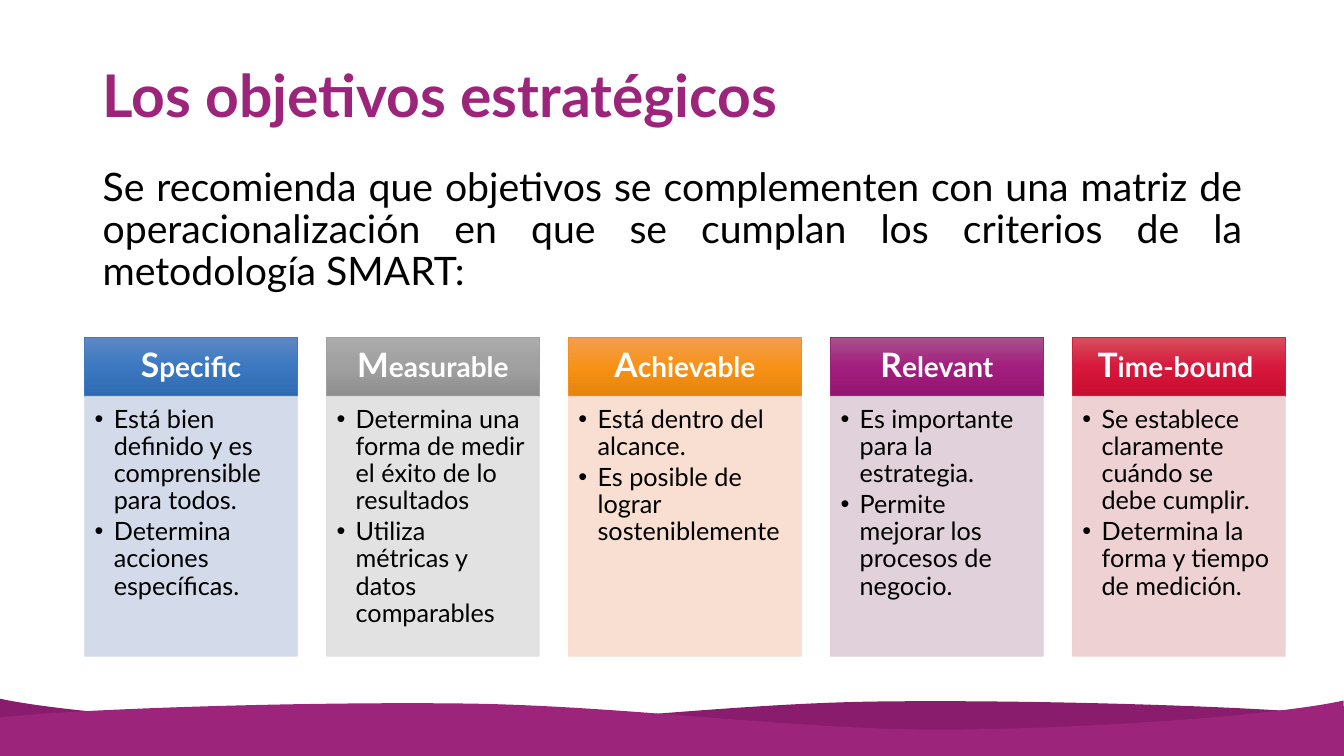
from copy import deepcopy
from pptx import Presentation, util as u
from pptx.dml.color import RGBColor
from pptx.enum import shapes, text
from pptx.oxml import ns
from lxml import etree

FONT = "Lato"
PLUM = "9C247B"
TITLE = "Los objetivos estratégicos"
INTRO = ("Se recomienda que objetivos se complementen con una matriz de "
         "operacionalización en que se cumplan los criterios de la metodología SMART:")
CARDS = [
    ("Specific", 2.11, ("5E88C4", "3B78C1", "2F6BB1"), "4179BB", "CFD7E7",
     ("Está bien definido y es comprensible para todos.",
      "Determina acciones específicas.")),
    ("Measurable", 2.11, ("ACABAB", "A1A0A0", "8F8E8E"), "A1A0A0", "E0DFDF",
     ("Determina una forma de medir el éxito de lo resultados",
      "Utiliza métricas y datos comparables")),
    ("Achievable", 2.31, ("F29D50", "F89216", "E5830B"), "EE9120", "F8DCCD",
     ("Está dentro del alcance.",
      "Es posible de lograr sosteniblemente")),
    ("Relevant", 2.11, ("A9508B", "A21E7E", "951572"), PLUM, "DECDD7",
     ("Es importante para la estrategia.",
      "Permite mejorar los procesos de negocio.")),
    ("Time-bound ", 2.11, ("D84F5E", "D7173C", "C70D30"), "CE2041", "EDCDCF",
     ("Se establece claramente cuándo se debe cumplir.",
      "Determina la forma y tiempo de medición.")),
]
WAVES = [
    ("891C6C", (13.33, 7.1),
     [(12.56, 7.01), (10.26, 6.94), (8.7, 6.96),
      (7.15, 6.98), (5.43, 7.22), (3.98, 7.22),
      (2.53, 7.21), (0.68, 7.08), (-0.01, 6.93)],
     [(-0.01, 7.49), (13.33, 7.5)]),
    (PLUM, (-0.01, 7.12),
     [(0.76, 7.03), (3.06, 6.96), (4.62, 6.98),
      (6.18, 7), (7.89, 7.24), (9.35, 7.24),
      (10.8, 7.23), (12.65, 7.1), (13.33, 6.95)],
     [(13.34, 7.5), (0, 7.52)]),
]
LEFT, TOP, GAP = 0.84, 3.35, 0.29
HEAD, BODY = 0.58, 2.58


def paint(color, code):
    color.rgb = RGBColor.from_string(code)


def style(run, size, code, bold=False):
    font = run.font
    font.name, font.size, font.bold = FONT, u.Pt(size), bold
    paint(font.color, code)


def setup(frame, anchor, insets):
    frame.word_wrap = True
    frame.vertical_anchor = anchor
    (frame.margin_left, frame.margin_top,
     frame.margin_right, frame.margin_bottom) = map(u.Inches, insets)


def label(slide, box, words, size, code, anchor, align, bold=False):
    frame = slide.shapes.add_textbox(*map(u.Inches, box)).text_frame
    setup(frame, anchor, (0.1, 0.05, 0.1, 0.05))
    frame.text = words
    para = frame.paragraphs[0]
    para.alignment, para.line_spacing = align, 0.9
    style(para.runs[0], size, code, bold)


def panel(slide, x, y, wide, high, edge):
    rect = slide.shapes.add_shape(
        shapes.MSO_SHAPE.RECTANGLE, *map(u.Inches, (x, y, wide, high)))
    rect.shadow.inherit = False
    rect.line.width = u.Pt(0.5)
    paint(rect.line.color, edge)
    return rect


def shade(rect, codes):
    rect.fill.gradient()
    rect.fill.gradient_angle = 270
    stops = rect._element.spPr.find(".//" + ns.qn("a:gsLst"))
    stops.append(deepcopy(stops[-1]))
    for stop, code, place in zip(rect.fill.gradient_stops, codes, (0, 0.5, 1)):
        paint(stop.color, code)
        stop.position = place


def header(slide, x, wide, word, codes, edge):
    rect = panel(slide, x, TOP, wide, HEAD, edge)
    shade(rect, codes)
    frame = rect.text_frame
    setup(frame, text.MSO_ANCHOR.MIDDLE, (0.19, 0.11, 0.19, 0.11))
    para = frame.paragraphs[0]
    para.alignment, para.line_spacing = text.PP_ALIGN.CENTER, 0.9
    for part, size in ((word[0], 24), (word[1:], 20)):
        run = para.add_run()
        run.text = part
        style(run, size, "FFFFFF", True)


def detail(slide, x, wide, code, items):
    rect = panel(slide, x, TOP + HEAD, wide, BODY, code)
    rect.fill.solid()
    paint(rect.fill.fore_color, code)
    for tint in rect._element.spPr.iter(ns.qn("a:srgbClr")):
        etree.SubElement(tint, ns.qn("a:alpha"), val="90000")
    frame = rect.text_frame
    setup(frame, text.MSO_ANCHOR.TOP, (0.1, 0.1, 0.14, 0.16))
    frame.text = "\n".join(items)
    for para in frame.paragraphs:
        para.alignment, para.line_spacing = text.PP_ALIGN.LEFT, 0.9
        para.space_after = u.Pt(2.7)
        props = para._p.get_or_add_pPr()
        props.set("marL", str(u.Inches(0.19)))
        props.set("indent", str(u.Inches(-0.19)))
        etree.SubElement(props, ns.qn("a:buFont"), typeface="Arial")
        etree.SubElement(props, ns.qn("a:buChar"), char="•")
        style(para.runs[0], 18, "000000")


def bend(form, count):
    lines = list(form._element.spPr.iter(ns.qn("a:lnTo")))[:count]
    for n in range(0, count, 3):
        curve = etree.Element(ns.qn("a:cubicBezTo"))
        lines[n].addprevious(curve)
        for line in lines[n:n + 3]:
            curve.append(line[0])
            line.getparent().remove(line)


def wave(slide, code, start, crest, base):
    pen = slide.shapes.build_freeform(*map(u.Inches, start))
    pen.add_line_segments([tuple(map(u.Inches, dot)) for dot in crest + base])
    form = pen.convert_to_shape()
    bend(form, len(crest))
    form.shadow.inherit = False
    form.fill.solid()
    paint(form.fill.fore_color, code)
    form.line.fill.background()


def main():
    deck = Presentation()
    deck.slide_width, deck.slide_height = u.Inches(40 / 3), u.Inches(7.5)
    slide = deck.slides.add_slide(deck.slide_layouts[6])
    for item in WAVES:
        wave(slide, *item)
    label(slide, (0.92, 0.25, 11.5, 1.45), TITLE, 42, PLUM,
          text.MSO_ANCHOR.MIDDLE, text.PP_ALIGN.LEFT, True)
    label(slide, (0.92, 1.61, 11.5, 1.13), INTRO, 28, "000000",
          text.MSO_ANCHOR.TOP, text.PP_ALIGN.JUSTIFY)
    x = LEFT
    for word, wide, codes, edge, pale, items in CARDS:
        header(slide, x, wide, word, codes, edge)
        detail(slide, x, wide, pale, items)
        x += wide + GAP
    deck.save("out.pptx")


if __name__ == "__main__":
    main()
